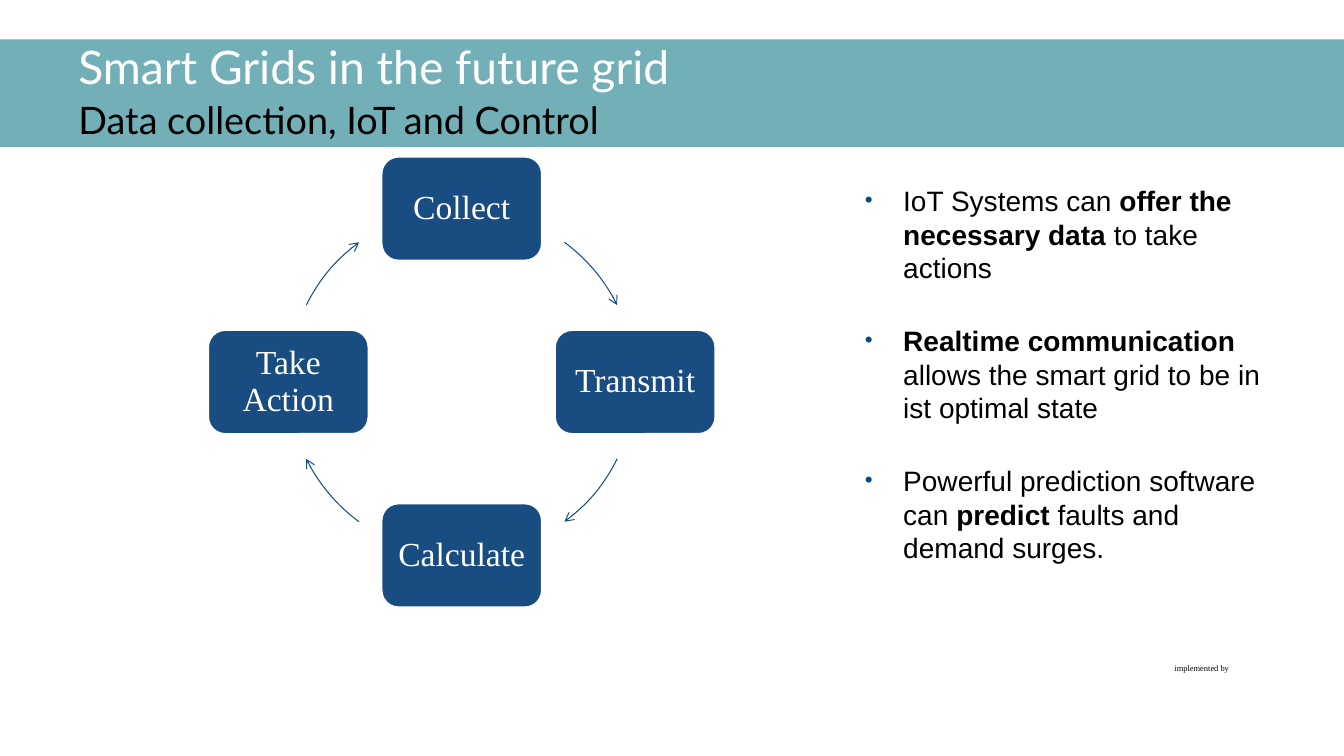
from lxml import etree
from pptx import Presentation
from pptx.dml.color import RGBColor
from pptx.enum import shapes, text
from pptx.oxml import ns
from pptx.util import Inches, Pt

NAVY, TEAL, WHITE, BLACK = "194C80", "73AFB7", "FFFFFF", "000000"


def color(value):
    return RGBColor.from_string(value)


def add_span(para, words, font="Arial", size=20, fill=BLACK, bold=False):
    span = para.add_run()
    span.text = words
    span.font.name = font
    span.font.size = Pt(size)
    span.font.bold = bold
    span.font.color.rgb = color(fill)


deck = Presentation()
deck.slide_width, deck.slide_height = Inches(13.33), Inches(7.5)
page = deck.slides.add_slide(deck.slide_layouts[6])

# Footer label
box = page.shapes.add_textbox(Inches(11.65), Inches(6.58), Inches(0.54), Inches(0.1))
frame = box.text_frame
frame.word_wrap = False
frame.margin_left = frame.margin_right = frame.margin_top = frame.margin_bottom = 0
add_span(frame.paragraphs[0], "implemented by", font="Times New Roman", size=6)

# Title band
band = page.shapes.add_shape(
    shapes.MSO_SHAPE.RECTANGLE, 0, Inches(0.39), Inches(13.33), Inches(1.07))
band.shadow.inherit = False
band.fill.solid()
band.fill.fore_color.rgb = color(TEAL)
band.line.fill.background()

# Cycle: four steps clockwise from the top, each followed by an arc
center_x, center_y, radius = 4.58, 3.79, 1.72
step_width, step_height = 1.6, 1.04
half_sweep = 13.7
# Label, direction from the centre, middle angle of the arc that follows
steps = [
    ("Collect", 0, -1, 320),
    ("Transmit", 1, 0, 40),
    ("Calculate", 0, 1, 140),
    ("Take Action", -1, 0, 220),
]
for label, across, down, arc_middle in steps:
    step = page.shapes.add_shape(
        shapes.MSO_SHAPE.ROUNDED_RECTANGLE,
        Inches(center_x + across * radius - step_width / 2),
        Inches(center_y + down * radius - step_height / 2),
        Inches(step_width), Inches(step_height))
    step.shadow.inherit = False
    step.fill.solid()
    step.fill.fore_color.rgb = color(NAVY)
    step.line.color.rgb = color(WHITE)
    step.line.width = Pt(2)
    frame = step.text_frame
    frame.word_wrap = True
    frame.vertical_anchor = text.MSO_ANCHOR.MIDDLE
    frame.margin_left = frame.margin_right = Inches(0.08)
    para = frame.paragraphs[0]
    para.alignment = text.PP_ALIGN.CENTER
    para.line_spacing = 0.9
    add_span(para, label, font="Times New Roman", size=24, fill=WHITE)

    arc = page.shapes.add_shape(
        shapes.MSO_SHAPE.ARC, Inches(center_x - radius), Inches(center_y - radius),
        Inches(2 * radius), Inches(2 * radius))
    arc.shadow.inherit = False
    # Adjustments are 60000ths of a degree, scaled by 100000
    arc.adjustments[0] = (arc_middle - half_sweep) * 0.6
    arc.adjustments[1] = (arc_middle + half_sweep) * 0.6
    arc.fill.background()
    arc.line.color.rgb = color(NAVY)
    arc.line.width = Pt(0.75)
    etree.SubElement(arc.line._get_or_add_ln(), ns.qn("a:tailEnd"), type="arrow")

# Bullet list
points = [
    [("IoT Systems can ", False), ("offer the necessary data ", True),
     ("to take actions", False)],
    [("Realtime communication ", True),
     ("allows the smart grid to be in ist optimal state", False)],
    [("Powerful prediction software can ", False), ("predict ", True),
     ("faults and demand surges.", False)],
]
box = page.shapes.add_textbox(Inches(8.48), Inches(1.78), Inches(4.12), Inches(4.8))
frame = box.text_frame
frame.word_wrap = True
frame.margin_left = Inches(0.1)
frame.margin_right = frame.margin_top = frame.margin_bottom = Inches(0.04)
for index, point in enumerate(points):
    para = frame.add_paragraph() if index else frame.paragraphs[0]
    if index:
        para.space_before = Pt(28)
    props = para._p.get_or_add_pPr()
    props.set("marL", str(Inches(0.38)))
    props.set("indent", str(-Inches(0.38)))
    bullet_color = etree.SubElement(props, ns.qn("a:buClr"))
    etree.SubElement(bullet_color, ns.qn("a:srgbClr"), val="004F80")
    etree.SubElement(props, ns.qn("a:buSzPct"), val="80000")
    etree.SubElement(props, ns.qn("a:buFont"), typeface="Arial")
    etree.SubElement(props, ns.qn("a:buChar"), char="•")
    for words, bold in point:
        add_span(para, words, bold=bold)

# Title and subtitle
box = page.shapes.add_textbox(Inches(0.68), Inches(0.39), Inches(10), Inches(1.07))
frame = box.text_frame
frame.word_wrap = True
frame.vertical_anchor = text.MSO_ANCHOR.MIDDLE
para = frame.paragraphs[0]
para.line_spacing = Pt(35)
add_span(para, "Smart Grids in the future grid", font="Lato", size=33, fill=WHITE)
para.add_line_break()
add_span(para, "Data collection, IoT and Control", font="Lato", size=27)

deck.save("out.pptx")
